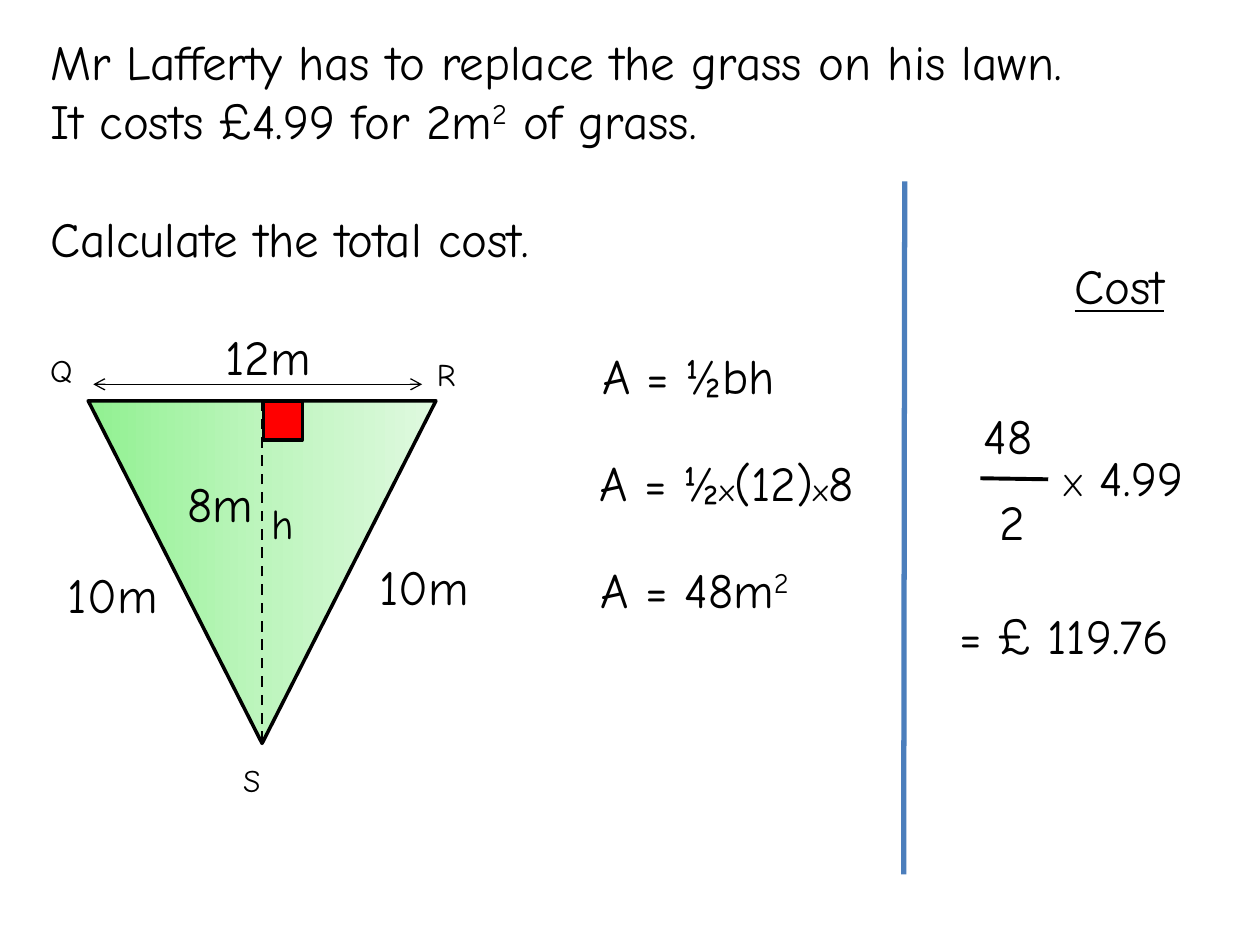
from copy import deepcopy
from dataclasses import dataclass
from typing import NamedTuple, Optional

from lxml.etree import SubElement
from pptx import Presentation
from pptx.dml.color import RGBColor
from pptx.enum.dml import MSO_LINE
from pptx.enum.shapes import MSO_CONNECTOR, MSO_SHAPE
from pptx.enum.text import MSO_AUTO_SIZE
from pptx.oxml.ns import qn
from pptx.util import Pt

BLACK = RGBColor(0x00, 0x00, 0x00)
RED = RGBColor(0xFF, 0x00, 0x00)
DIVIDER_BLUE = RGBColor(0x4B, 0x7E, 0xBC)
LAWN_GREENS = (
    RGBColor(0x91, 0xF1, 0x91),
    RGBColor(0xBD, 0xF5, 0xBD),
    RGBColor(0xDF, 0xF9, 0xDF),
)
BASE_FONT = {"name": "Comic Neue", "size": Pt(28)}
BLANK_LAYOUT = 6


class Run(NamedTuple):
    text: str
    font: dict = {}
    superscript: bool = False


@dataclass
class Label:
    left: float
    top: float
    width: float
    height: float
    paragraphs: list[list[Run]]
    wrap: bool = False


@dataclass
class Line:
    start: tuple[float, float]
    end: tuple[float, float]
    width: float
    color: RGBColor = BLACK
    dash: Optional[MSO_LINE] = None
    arrows: bool = False


SMALL = {"size": Pt(18)}
MEDIUM = {"size": Pt(24)}
SQUARED = Run("2", superscript=True)


def add_label(slide, label: Label):
    box = slide.shapes.add_textbox(
        Pt(label.left), Pt(label.top), Pt(label.width), Pt(label.height))
    frame = box.text_frame
    frame.word_wrap = label.wrap
    frame.auto_size = MSO_AUTO_SIZE.SHAPE_TO_FIT_TEXT
    for index, runs in enumerate(label.paragraphs):
        paragraph = frame.add_paragraph() if index else frame.paragraphs[0]
        for part in runs:
            run = paragraph.add_run()
            run.text = part.text
            run.font.color.rgb = BLACK
            for attribute, value in {**BASE_FONT, **part.font}.items():
                setattr(run.font, attribute, value)
            if part.superscript:
                run.font._element.set("baseline", "30000")
    return box


def add_line(slide, line: Line) -> None:
    connector = slide.shapes.add_connector(
        MSO_CONNECTOR.STRAIGHT, *(Pt(value) for value in line.start + line.end))
    connector.line.color.rgb = line.color
    connector.line.width = Pt(line.width)
    if line.dash is not None:
        connector.line.dash_style = line.dash
    properties = connector._element.spPr
    if line.arrows:
        for end in ("a:headEnd", "a:tailEnd"):
            SubElement(properties.find(qn("a:ln")), qn(end), type="arrow")
    SubElement(properties, qn("a:effectLst"))


def add_outlined(slide, preset: MSO_SHAPE, left: float, top: float,
                 width: float, height: float):
    shape = slide.shapes.add_shape(preset, Pt(left), Pt(top), Pt(width), Pt(height))
    shape.shadow.inherit = False
    shape.line.color.rgb = BLACK
    shape.line.width = Pt(2)
    return shape


def add_lawn(slide) -> None:
    lawn = add_outlined(slide, MSO_SHAPE.ISOSCELES_TRIANGLE, 50.4, LAWN_TOP, 198.7, 195.8)
    lawn.rotation = 180
    lawn.fill.gradient()
    lawn.fill.gradient_angle = 180
    stop_list = lawn._element.spPr.find(qn("a:gradFill")).find(qn("a:gsLst"))
    stop_list.append(deepcopy(stop_list[0]))
    for index, (stop, green) in enumerate(zip(lawn.fill.gradient_stops, LAWN_GREENS)):
        stop.position = index / 2
        stop.color.rgb = green


LAWN_TOP = 229
LAWN_MIDDLE = 149.75

QUESTION = Label(21.6, 14.4, 662, 142, [
    [Run("Mr Lafferty has to replace the grass on his lawn.")],
    [Run("It costs £4.99 for 2m"), SQUARED, Run(" of grass.")],
    [Run("Calculate the total cost.")],
], wrap=True)

LABELS = [
    # Corners and height of the lawn
    Label(21.6, 197.3, 30.2, 29, [[Run("Q", SMALL)]]),
    Label(242.6, 199.4, 25.9, 29, [[Run("R", SMALL)]]),
    Label(131.8, 431.3, 27.4, 29, [[Run("S", SMALL)]]),
    Label(148.3, 280.8, 28.8, 36.7, [[Run("h", MEDIUM)]]),
    # Lengths
    Label(209.5, 314.6, 66.2, 41, [[Run("10m")]]),
    Label(121.7, 182.9, 67, 41, [[Run("12m")]]),
    Label(31.7, 319, 66.2, 41, [[Run("10m")]]),
    Label(100.1, 267.1, 54, 41, [[Run("8m")]]),
    # Area working
    Label(337, 193.7, 118, 41, [[Run("A = ½bh")]]),
    Label(335.5, 254.9, 182.9, 41, [[
        Run("A = ½"), Run("x", SMALL), Run("(12)"), Run("x", SMALL), Run("8")]]),
    Label(336.2, 316.1, 134.6, 41, [[Run("A = 48m"), SQUARED]]),
    # Cost working
    Label(607, 142.6, 73.4, 41, [[Run("Cost", {"underline": True})]]),
    Label(555.1, 228.2, 49, 41, [[Run("48")]]),
    Label(563.8, 277.2, 31.7, 41, [[Run("2")]]),
    Label(599.8, 252, 95, 41, [[Run("X", SMALL), Run(" 4.99")]]),
    Label(541.4, 342.7, 152.6, 41, [[Run("= £ 119.76")]]),
]

LINES = [
    # Height, base arrow, column divider, fraction bar
    Line((LAWN_MIDDLE, 424), (LAWN_MIDDLE, LAWN_TOP), 1.5, dash=MSO_LINE.DASH),
    Line((53.3, 219.6), (241.2, 219.6), 0.75, arrows=True),
    Line((517, 103.7), (516.4, 499.7), 3, DIVIDER_BLUE),
    Line((560.2, 273.3), (599, 273.9), 2.25),
]


def main() -> None:
    presentation = Presentation()
    presentation.slide_width, presentation.slide_height = Pt(720), Pt(540)
    slide = presentation.slides.add_slide(presentation.slide_layouts[BLANK_LAYOUT])

    # Lawn with its height and right angle
    add_lawn(slide)
    for line in LINES:
        add_line(slide, line)
    right_angle = add_outlined(slide, MSO_SHAPE.RECTANGLE, 150.5, LAWN_TOP, 22.3, 22.3)
    right_angle.fill.solid()
    right_angle.fill.fore_color.rgb = RED

    # Question, its task set one line apart
    question = add_label(slide, QUESTION)
    question.text_frame.paragraphs[-1].space_before = Pt(33.8)

    # Labels and working
    for label in LABELS:
        add_label(slide, label)

    presentation.save("out.pptx")


if __name__ == "__main__":
    main()
